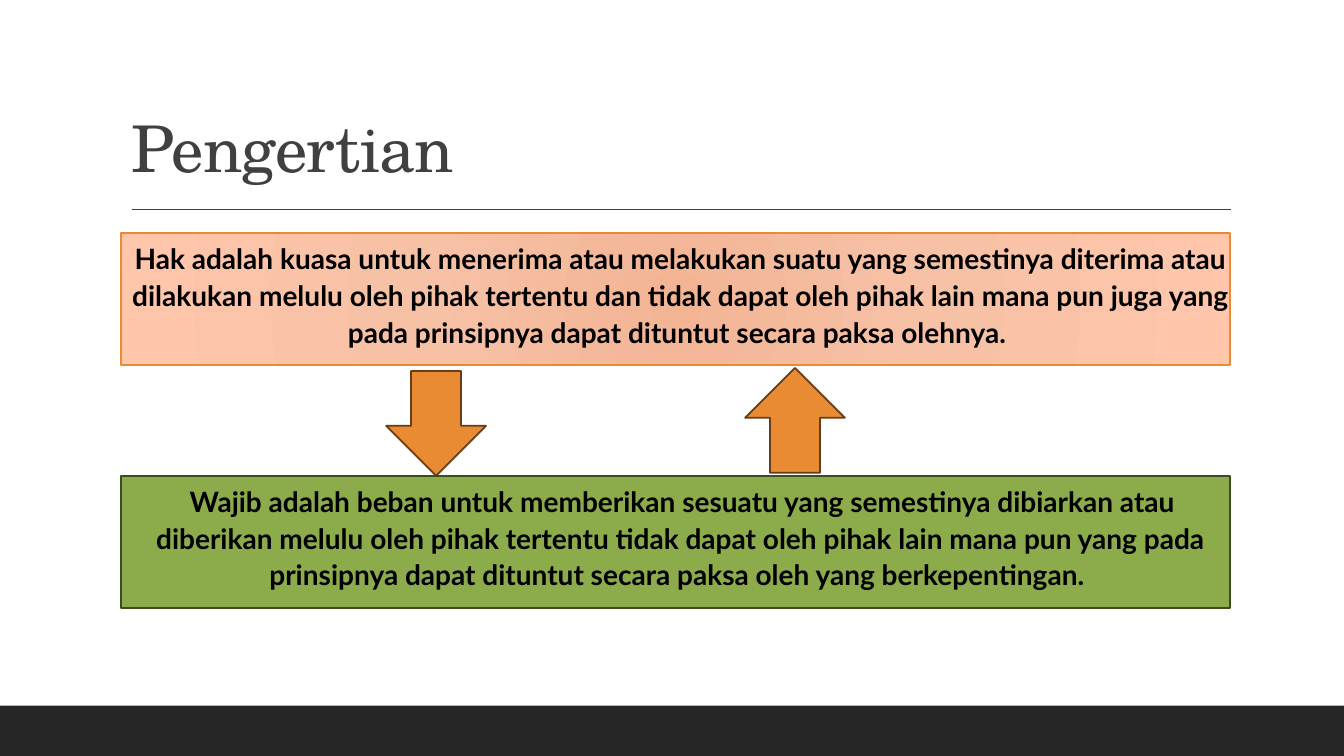
from lxml.etree import SubElement
from pptx import Presentation
from pptx.dml.color import RGBColor
from pptx.enum.shapes import MSO_CONNECTOR, MSO_SHAPE
from pptx.enum.text import MSO_ANCHOR, MSO_AUTO_SIZE, PP_ALIGN
from pptx.oxml import parse_xml
from pptx.oxml.ns import nsdecls, qn
from pptx.util import Inches, Pt

COLORS = {
    "ink": "000000",
    "title": "404040",
    "footer": "262626",
    "orange": "E88B33",
    "arrow_edge": "663D16",
    "green": "8CAB4A",
    "green_edge": "3D4B20",
}
HAK_GRADIENT = [(0, "F3B494"), (45, "F7C1A6"), (100, "FFC6AB")]
HAK = (
    "Hak adalah kuasa untuk menerima atau melakukan suatu yang semestinya diterima atau "
    "dilakukan melulu oleh pihak tertentu dan tidak dapat oleh pihak lain mana pun juga yang "
    "pada prinsipnya dapat dituntut secara paksa olehnya. "
)
WAJIB = (
    "Wajib adalah beban untuk memberikan sesuatu yang semestinya dibiarkan atau "
    "diberikan melulu oleh pihak tertentu tidak dapat oleh pihak lain mana pun yang pada "
    "prinsipnya dapat dituntut secara paksa oleh yang berkepentingan. "
)
LEFT, WIDTH, BOX_HEIGHT = 1.2, 11, 1.31


def place(part, left, top, width, height):
    part.left, part.top = Inches(left), Inches(top)
    part.width, part.height = Inches(width), Inches(height)


def paint(part, fill, edge=None, weight=1.25):
    part.shadow.inherit = False
    part.fill.solid()
    part.fill.fore_color.rgb = RGBColor.from_string(COLORS[fill])
    if edge:
        part.line.color.rgb = RGBColor.from_string(COLORS[edge])
        part.line.width = Pt(weight)
    else:
        part.line.fill.background()


prs = Presentation()
prs.slide_width, prs.slide_height = Inches(13.33), Inches(7.5)
slide = prs.slides.add_slide(prs.slide_layouts[1])
shapes = slide.shapes

footer = shapes.add_shape(MSO_SHAPE.RECTANGLE, 0, Inches(7), prs.slide_width, Inches(0.5))
paint(footer, "footer")

rule = shapes.add_connector(
    MSO_CONNECTOR.STRAIGHT, Inches(1.31), Inches(2.08), Inches(12.21), Inches(2.08)
)
rule.line.color.rgb = RGBColor.from_string(COLORS["title"])
rule.line.width = Pt(1)
SubElement(rule._element.spPr, qn("a:effectLst"))

title = shapes.title
place(title, LEFT, 0.31, WIDTH, 1.59)
title.text_frame.auto_size = MSO_AUTO_SIZE.NONE
title.text_frame.vertical_anchor = MSO_ANCHOR.BOTTOM
heading = title.text_frame.paragraphs[0]
heading.alignment = PP_ALIGN.LEFT
heading.line_spacing = 0.9
heading_run = heading.add_run()
heading_run.text = "Pengertian"
heading_run.font.name = "TeX Gyre Schola"
heading_run.font.size = Pt(46)
heading_run.font.color.rgb = RGBColor.from_string(COLORS["title"])
heading_run._r.get_or_add_rPr().set("spc", "-50")

hak = slide.placeholders[1]
place(hak, LEFT, 2.31, WIDTH, BOX_HEIGHT)
stops = "".join(
    f'<a:gs pos="{position * 1000}"><a:srgbClr val="{color}"/></a:gs>'
    for position, color in HAK_GRADIENT
)
hak._element.spPr.append(parse_xml(
    f'<a:gradFill {nsdecls("a")} rotWithShape="1"><a:gsLst>{stops}</a:gsLst>'
    '<a:path path="circle"><a:fillToRect l="100000" t="100000" r="100000" b="100000"/>'
    "</a:path></a:gradFill>"
))
hak.line.color.rgb = RGBColor.from_string(COLORS["orange"])
hak.line.width = Pt(1)

wajib = shapes.add_shape(
    MSO_SHAPE.RECTANGLE, Inches(LEFT), Inches(4.72), Inches(WIDTH), Inches(BOX_HEIGHT)
)
paint(wajib, "green", "green_edge")

for box, definition in ((hak, HAK), (wajib, WAJIB)):
    frame = box.text_frame
    frame.word_wrap = True
    frame.auto_size = MSO_AUTO_SIZE.NONE
    frame.vertical_anchor = MSO_ANCHOR.TOP
    frame.margin_left = frame.margin_right = 0
    frame.margin_top = frame.margin_bottom = Inches(0.05)
    paragraph = frame.paragraphs[0]
    paragraph.alignment = PP_ALIGN.CENTER
    paragraph.line_spacing = 1.1
    paragraph.space_before, paragraph.space_after = Pt(12), Pt(2)
    properties = paragraph._p.get_or_add_pPr()
    properties.set("marL", str(Inches(0.1)))
    properties.set("indent", str(-Inches(0.1)))
    bullet_color = SubElement(properties, qn("a:buClr"))
    SubElement(bullet_color, qn("a:srgbClr"), val=COLORS["orange"])
    SubElement(properties, qn("a:buChar"), char=" ")
    run = paragraph.add_run()
    run.text = definition
    run.font.name = "Lato"
    run.font.size = Pt(20)
    run.font.bold = True
    run.font.color.rgb = RGBColor.from_string(COLORS["ink"])

for left, top, rotation in ((3.83, 3.68, 0), (7.39, 3.65, 180)):
    arrow = shapes.add_shape(
        MSO_SHAPE.DOWN_ARROW, Inches(left), Inches(top), Inches(0.99), Inches(1.04)
    )
    arrow.rotation = rotation
    paint(arrow, "orange", "arrow_edge")

prs.save("out.pptx")
